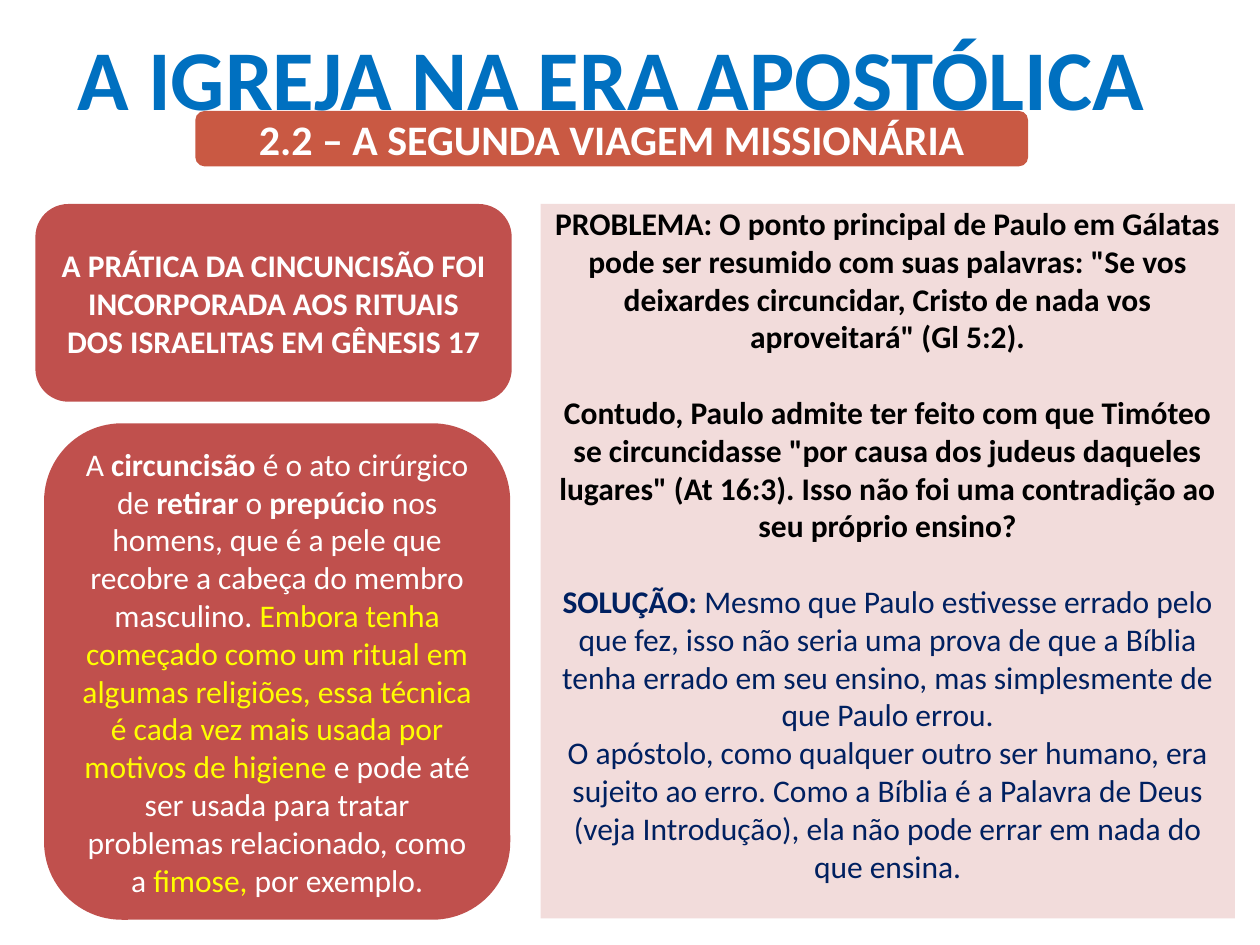
import pptx
import pptx.util
import pptx.dml.color
import pptx.enum.shapes
import pptx.enum.text

Pt = pptx.util.Pt
SHAPES = pptx.enum.shapes.MSO_SHAPE
ANCHOR = pptx.enum.text.MSO_ANCHOR

BLUE, NAVY, BLACK = "0070C0", "002060", "000000"
WHITE, YELLOW = "FFFFFF", "FFFF00"
ORANGE, RED, PINK = "C95943", "C0504D", "F2DCDB"

TITLE_BOX = (25.2, 9.4, 648, 54.7)
SUBTITLE_BOX = (111.6, 63.4, 475.9, 31.7)
PRACTICE_BOX = (20.2, 116.6, 272.2, 113)
DEFINITION_BOX = (25.2, 241.9, 266.4, 283.7)
DEBATE_BOX = (308.9, 116.6, 396.7, 408.2)

PRACTICE = ("A PRÁTICA DA CINCUNCISÃO FOI INCORPORADA AOS RITUAIS "
            "DOS ISRAELITAS EM GÊNESIS 17")
# Each run: text, bold, colour
DEFINITION = [
    ("A ", False, WHITE),
    ("circuncisão", True, WHITE),
    (" é o ato cirúrgico de ", False, WHITE),
    ("retirar", True, WHITE),
    (" o ", False, WHITE),
    ("prepúcio", True, WHITE),
    (" nos homens, que é a pele que recobre a cabeça do membro masculino. ",
     False, WHITE),
    ("Embora tenha começado como um ritual em algumas religiões, essa técnica "
     "é cada vez mais usada por motivos de higiene", False, YELLOW),
    (" e pode até ser usada para tratar problemas relacionado, como a ",
     False, WHITE),
    ("fimose, ", False, YELLOW),
    ("por exemplo.", False, WHITE),
]
# Each paragraph: space before, runs
DEBATE = [
    (0, [("PROBLEMA: O ponto principal de Paulo em Gálatas pode ser resumido "
          "com suas palavras: \"Se vos deixardes circuncidar, Cristo de nada "
          "vos aproveitará\" (Gl 5:2).", True, BLACK)]),
    (21.6, [("Contudo, Paulo admite ter feito com que Timóteo se circuncidasse "
             "\"por causa dos judeus daqueles lugares\" (At 16:3). Isso não foi "
             "uma contradição ao seu próprio ensino?", True, BLACK)]),
    (21.6, [("SOLUÇÃO:", True, NAVY),
            (" Mesmo que Paulo estivesse errado pelo que fez, isso não seria "
             "uma prova de que a Bíblia tenha errado em seu ensino, mas "
             "simplesmente de que Paulo errou.", False, NAVY)]),
    (0, [("O apóstolo, como qualquer outro ser humano, era sujeito ao erro. "
          "Como a Bíblia é a Palavra de Deus (veja Introdução), ela não pode "
          "errar em nada do que ensina.", False, NAVY)]),
]


def color(hex_value):
    return pptx.dml.color.RGBColor.from_string(hex_value)


def apply_format(target, values):
    for name, value in values.items():
        setattr(target, name, value)


def write_paragraph(paragraph, runs, size):
    paragraph.alignment = pptx.enum.text.PP_ALIGN.CENTER
    for text, bold, hex_value in runs:
        run = paragraph.add_run()
        run.text = text
        apply_format(run.font, {"name": "Calibri", "size": Pt(size), "bold": bold})
        run.font.color.rgb = color(hex_value)


def add_block(slide, geometry, box, fill):
    block = slide.shapes.add_shape(geometry, *map(Pt, box))
    block.shadow.inherit = False
    block.fill.solid()
    block.fill.fore_color.rgb = color(fill)
    block.line.fill.background()
    block.text_frame.word_wrap = True
    return block


def place_title(slide, box):
    title = slide.shapes.title
    edges = ("left", "top", "width", "height")
    apply_format(title, dict(zip(edges, map(Pt, box))))
    apply_format(title.text_frame, {
        "vertical_anchor": ANCHOR.TOP,
        "word_wrap": True,
        "auto_size": pptx.enum.text.MSO_AUTO_SIZE.NONE,
        "margin_top": Pt(5),
        "margin_bottom": Pt(0),
    })
    write_paragraph(title.text_frame.paragraphs[0],
                    [("A IGREJA NA ERA APOSTÓLICA", True, BLUE)], 48.6)


def place_card(slide, box, fill, runs, size=18):
    """Rounded card with one centred paragraph."""
    card = add_block(slide, SHAPES.ROUNDED_RECTANGLE, box, fill)
    card.text_frame.vertical_anchor = ANCHOR.MIDDLE
    write_paragraph(card.text_frame.paragraphs[0], runs, size)


def place_debate(slide, box):
    frame = add_block(slide, SHAPES.RECTANGLE, box, PINK).text_frame
    apply_format(frame, {"vertical_anchor": ANCHOR.TOP, "margin_top": Pt(0)})
    for index, (space, runs) in enumerate(DEBATE):
        paragraph = frame.add_paragraph() if index else frame.paragraphs[0]
        paragraph.space_before = Pt(space)
        write_paragraph(paragraph, runs, 18)


def main():
    presentation = pptx.Presentation()
    apply_format(presentation, {"slide_width": Pt(720), "slide_height": Pt(540)})
    slide = presentation.slides.add_slide(presentation.slide_layouts[5])
    place_title(slide, TITLE_BOX)
    place_card(slide, SUBTITLE_BOX, ORANGE,
               [("2.2 – A SEGUNDA VIAGEM MISSIONÁRIA", True, WHITE)], 24)
    place_card(slide, PRACTICE_BOX, RED, [(PRACTICE, True, WHITE)])
    place_card(slide, DEFINITION_BOX, RED, DEFINITION)
    place_debate(slide, DEBATE_BOX)
    presentation.save("out.pptx")


if __name__ == "__main__":
    main()
